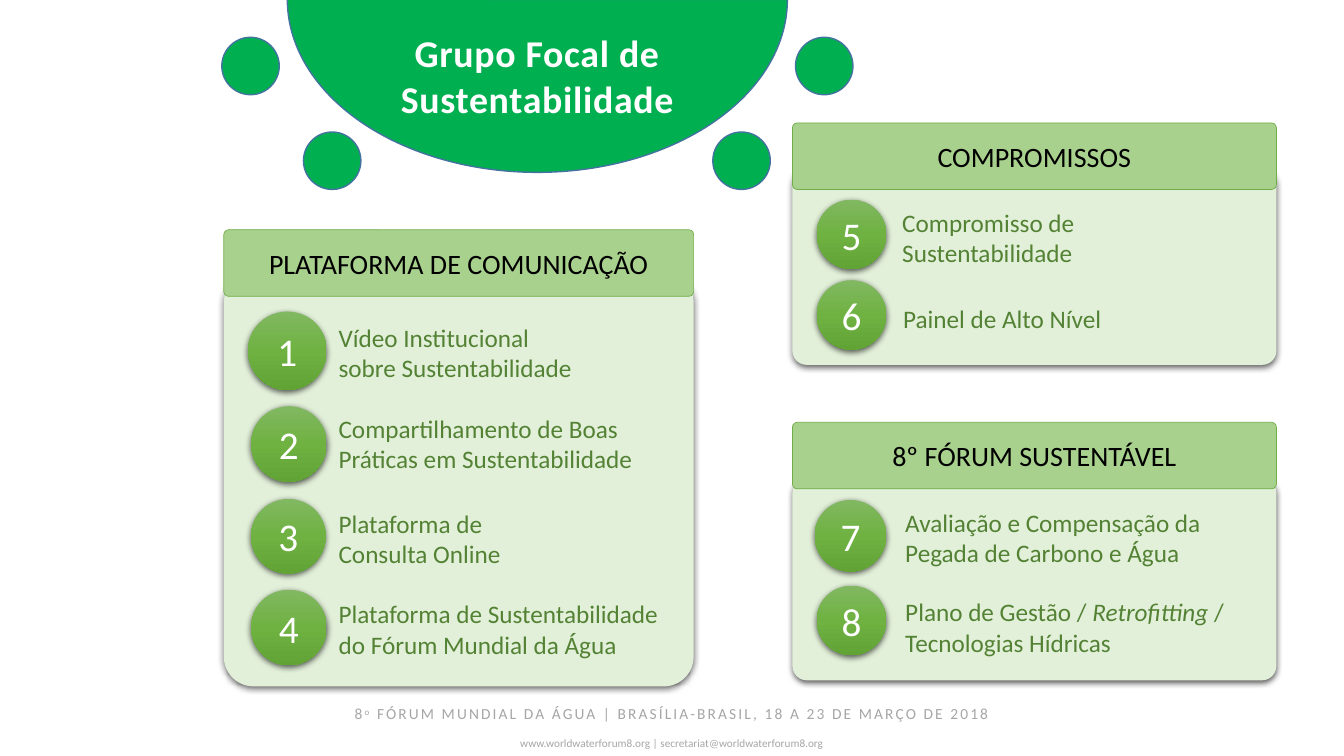
from dataclasses import dataclass

from lxml import etree
from pptx import Presentation
from pptx.dml.color import RGBColor
from pptx.enum import shapes, text as t
from pptx.oxml.ns import qn
from pptx.util import Inches, Pt

FONT = "Calibri"
WHITE = RGBColor(0xFF, 0xFF, 0xFF)
BLACK = RGBColor(0x00, 0x00, 0x00)
GREY = RGBColor(0xA6, 0xA6, 0xA6)
VIVID_GREEN = RGBColor(0x00, 0xB0, 0x50)
BLUE_EDGE = RGBColor(0x43, 0x73, 0x9E)
PALE_GREEN = RGBColor(0xE2, 0xF0, 0xD9)
HEADER_GREEN = RGBColor(0xA9, 0xD1, 0x8E)
EDGE_GREEN = RGBColor(0x70, 0xAD, 0x47)
TEXT_GREEN = RGBColor(0x54, 0x82, 0x35)
BADGE_STOPS = (
    (0, RGBColor(0x81, 0xB8, 0x61)),
    (50, RGBColor(0x6F, 0xB2, 0x42)),
    (100, RGBColor(0x62, 0xA3, 0x36)),
)

HEADER_HEIGHT = 0.66
CORNER = 0.072
DOT_SIZE = 0.57

Bounds = tuple[float, float, float, float]


@dataclass(frozen=True)
class Item:
    """A numbered badge with its label."""
    number: int
    badge: tuple[float, float, float]  # left, top, diameter
    label: Bounds
    text: str
    italic: str = ""
    ending: str = ""


@dataclass(frozen=True)
class Panel:
    title: str
    header_top: float
    body: Bounds
    items: tuple[Item, ...]


PANELS = (
    Panel("PLATAFORMA DE COMUNICAÇÃO", 2.28, (2.22, 2.71, 4.66, 4.1), (
        Item(1, (2.46, 3.09, 0.78), (3.26, 3.15, 2.69, 0.71),
             "Vídeo Institucional sobre Sustentabilidade"),
        Item(2, (2.49, 4.03, 0.75), (3.26, 4.05, 3.2, 0.71),
             "Compartilhamento de Boas Práticas em Sustentabilidade"),
        Item(3, (2.49, 4.95, 0.74), (3.26, 4.99, 2.44, 0.71),
             "Plataforma de Consulta Online"),
        Item(4, (2.49, 5.85, 0.75), (3.26, 5.89, 3.45, 0.71),
             "Plataforma de Sustentabilidade do Fórum Mundial da Água"),
    )),
    Panel("COMPROMISSOS", 1.22, (7.86, 1.68, 4.8, 1.94), (
        Item(5, (8.1, 1.98, 0.69), (8.85, 2.01, 2.42, 0.71),
             "Compromisso de Sustentabilidade"),
        Item(6, (8.1, 2.78, 0.69), (8.86, 2.96, 2.27, 0.4),
             "Painel de Alto Nível"),
    )),
    Panel("8º FÓRUM SUSTENTÁVEL", 4.19, (7.86, 4.75, 4.8, 2), (
        Item(7, (8.08, 4.96, 0.71), (8.88, 4.98, 3.68, 0.71),
             "Avaliação e Compensação da Pegada de Carbono e Água"),
        Item(8, (8.1, 5.81, 0.69), (8.88, 5.87, 3.68, 0.71),
             "Plano de Gestão / ", "Retrofitting", " / Tecnologias Hídricas"),
    )),
)
DOTS = ((2.2, 0.37), (3.01, 1.31), (7.07, 1.31), (7.89, 0.37))


def add_text(para, text: str, *, size: float, color: RGBColor,
             bold: bool = False, italic: bool = False,
             spacing: float = 0, raised: int = 0) -> None:
    """Append a formatted span; spacing is in points, raised in percent."""
    span = para.add_run()
    span.text = text
    span.font.name = FONT
    span.font.size = Pt(size)
    span.font.color.rgb = color
    span.font.bold = bold
    span.font.italic = italic
    properties = span.font._element
    if spacing:
        properties.set("spc", str(round(spacing * 100)))
    if raised:
        properties.set("baseline", str(raised * 1000))


def add_text_box(page, bounds: Bounds):
    box = page.shapes.add_textbox(*map(Inches, bounds))
    box.text_frame.word_wrap = True
    box.text_frame.auto_size = t.MSO_AUTO_SIZE.SHAPE_TO_FIT_TEXT
    return box.text_frame


def add_shape(page, kind: shapes.MSO_SHAPE, bounds: Bounds, *,
              fill: RGBColor | None = None, edge: RGBColor | None = None,
              edge_width: float = 1, adjustments: tuple[float, ...] = ()):
    shape = page.shapes.add_shape(kind, *map(Inches, bounds))
    shape.shadow.inherit = False
    for index, value in enumerate(adjustments):
        shape.adjustments[index] = value
    if fill is not None:
        shape.fill.solid()
        shape.fill.fore_color.rgb = fill
    if edge is None:
        shape.line.fill.background()
    else:
        shape.line.color.rgb = edge
        shape.line.width = Pt(edge_width)
    shape.text_frame.word_wrap = True
    shape.text_frame.vertical_anchor = t.MSO_ANCHOR.MIDDLE
    shape.text_frame.paragraphs[0].alignment = t.PP_ALIGN.CENTER
    return shape


def add_color(parent, color: RGBColor):
    return etree.SubElement(parent, qn("a:srgbClr"), val=str(color))


def add_shadow(shape) -> None:
    effects = shape._element.spPr.find(qn("a:effectLst"))
    shadow = etree.SubElement(
        effects, qn("a:outerShdw"), blurRad=str(Pt(4.5)), dist=str(Pt(1.5)),
        dir="5400000", algn="ctr", rotWithShape="0")
    etree.SubElement(add_color(shadow, BLACK), qn("a:alpha"), val="63000")


def add_badge(page, item: Item) -> None:
    left, top, diameter = item.badge
    badge = add_shape(page, shapes.MSO_SHAPE.OVAL,
                      (left, top, diameter, diameter))
    badge.fill.gradient()
    badge.fill.gradient_angle = 270
    stops = badge._element.spPr.find(qn("a:gradFill")).find(qn("a:gsLst"))
    for stop in list(stops):
        stops.remove(stop)
    for percent, color in BADGE_STOPS:
        add_color(etree.SubElement(stops, qn("a:gs"), pos=str(percent * 1000)),
                  color)
    add_shadow(badge)
    add_text(badge.text_frame.paragraphs[0], str(item.number),
             size=28, color=WHITE)


def add_panel(page, panel: Panel) -> None:
    left, _, width, _ = panel.body
    rounded = shapes.MSO_SHAPE.ROUNDED_RECTANGLE
    add_shadow(add_shape(page, rounded, panel.body, fill=PALE_GREEN,
                         adjustments=(CORNER,)))
    header = add_shape(page, rounded,
                       (left, panel.header_top, width, HEADER_HEIGHT),
                       fill=HEADER_GREEN, edge=EDGE_GREEN, edge_width=0.5,
                       adjustments=(CORNER,))
    add_text(header.text_frame.paragraphs[0], panel.title,
             size=20, color=BLACK)
    for item in panel.items:
        add_badge(page, item)
        para = add_text_box(page, item.label).paragraphs[0]
        for text in filter(None, (item.text, item.italic, item.ending)):
            add_text(para, text, size=18, color=TEXT_GREEN,
                     italic=text == item.italic)


def add_title(page) -> None:
    dome = add_shape(page, shapes.MSO_SHAPE.PIE, (2.85, -1.72, 4.96, 3.43),
                     fill=VIVID_GREEN, edge=BLUE_EDGE,
                     adjustments=(0, 108.13))
    # Lift the title clear of the dome's curved lower edge
    dome.text_frame.vertical_anchor = t.MSO_ANCHOR.BOTTOM
    dome.text_frame.margin_bottom = Inches(0.51)
    add_text(dome.text_frame.paragraphs[0], "Grupo Focal de Sustentabilidade",
             size=27, color=WHITE, bold=True, spacing=0.5)
    for left, top in DOTS:
        add_shape(page, shapes.MSO_SHAPE.OVAL, (left, top, DOT_SIZE, DOT_SIZE),
                  fill=VIVID_GREEN, edge=BLUE_EDGE)


def add_footer(page) -> None:
    frame = add_text_box(page, (0, 6.94, 13.33, 0.56))
    event = frame.paragraphs[0]
    for text, raised in (
            ("8", 0), ("o", 30),
            (" FÓRUM MUNDIAL DA ÁGUA | BRASÍLIA-BRASIL, "
             "18 A 23 DE MARÇO DE 2018", 0)):
        add_text(event, text, size=11, color=GREY, spacing=1.5, raised=raised)
    contact = frame.add_paragraph()
    contact.space_before = Pt(9.8)
    add_text(contact, "www.worldwaterforum8.org | "
             "secretariat@worldwaterforum8.org", size=8, color=GREY)
    for para in frame.paragraphs:
        para.alignment = t.PP_ALIGN.CENTER


def main() -> None:
    deck = Presentation()
    deck.slide_width, deck.slide_height = Inches(13.33), Inches(7.5)
    page = deck.slides.add_slide(deck.slide_layouts[6])
    add_footer(page)
    for panel in PANELS:
        add_panel(page, panel)
    add_title(page)
    deck.save("out.pptx")


if __name__ == "__main__":
    main()
